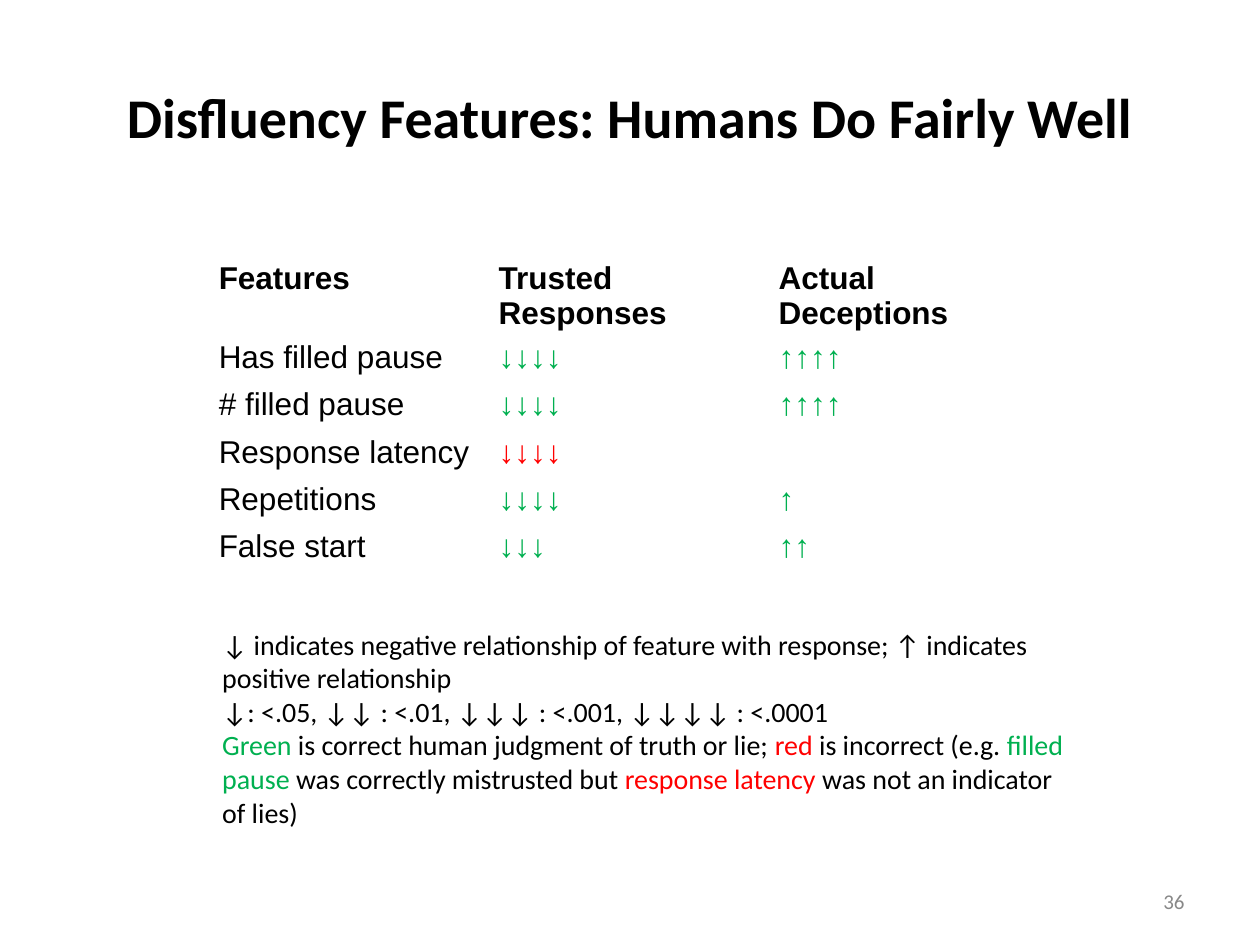
from pptx import Presentation
from pptx.dml.color import RGBColor
from pptx.enum.text import MSO_ANCHOR, PP_ALIGN
from pptx.util import Cm, Pt

BLACK = RGBColor(0x00, 0x00, 0x00)
GREEN = RGBColor(0x00, 0xB0, 0x50)
RED = RGBColor(0xFF, 0x00, 0x00)
GRAY = RGBColor(0x88, 0x88, 0x88)
MIDDLE = MSO_ANCHOR.MIDDLE
CENTER, RIGHT = PP_ALIGN.CENTER, PP_ALIGN.RIGHT

HEADS = ["Features", "Trusted Responses", "Actual Deceptions"]
ROWS = [
    ("Has filled pause", "↓↓↓↓", "↑↑↑↑"),
    ("# filled pause", "↓↓↓↓", "↑↑↑↑"),
    ("Response latency", "↓↓↓↓", ""),
    ("Repetitions", "↓↓↓↓", "↑"),
    ("False start", "↓↓↓", "↑↑"),
]
WRONG = "Response latency"
NOTES = [
    [("↓ indicates negative relationship of feature with response; "
      "↑ indicates positive relationship", BLACK)],
    [("↓: <.05, ↓↓ : <.01, ↓↓↓ : <.001, ↓↓↓↓ : <.0001", BLACK)],
    [("Green", GREEN), (" is correct human judgment of truth or lie; ", BLACK),
     ("red", RED), (" is incorrect (e.g. ", BLACK), ("filled pause ", GREEN),
     ("was correctly mistrusted but ", BLACK), ("response latency ", RED),
     ("was not an indicator of lies)", BLACK)],
]


def add_run(para, text, size, color, face="Calibri", bold=False):
    run = para.add_run()
    run.text = text
    font = run.font
    font.name, font.size, font.bold = face, Pt(size), bold
    font.color.rgb = color


def add_title(slide, box):
    title = slide.shapes.title
    title.left, title.top, title.width, title.height = box
    frame = title.text_frame
    frame.vertical_anchor = MIDDLE
    para = frame.paragraphs[0]
    para.alignment = CENTER
    add_run(para, "Disfluency Features: Humans Do Fairly Well", 32, BLACK, bold=True)


def add_grid(slide, box):
    rows = [HEADS] + ROWS
    table = slide.shapes.add_table(len(rows), len(HEADS), *box).table
    table.first_row = table.horz_banding = False
    for r, row in enumerate(rows):
        for c, text in enumerate(row):
            cell = table.cell(r, c)
            cell.fill.background()
            cell.margin_left = cell.margin_right = Cm(0.18)
            cell.margin_top = cell.margin_bottom = Cm(0.09)
            if not text:
                continue
            color = BLACK
            if r and c:
                color = RED if row[0] == WRONG else GREEN
            bold = r == 0 or (r, c) == (1, 1)
            add_run(cell.text_frame.paragraphs[0], text, 18, color, "Arial", bold)


def add_notes(slide, box):
    frame = slide.shapes.add_textbox(*box).text_frame
    frame.word_wrap = True
    for i, parts in enumerate(NOTES):
        para = frame.add_paragraph() if i else frame.paragraphs[0]
        for text, color in parts:
            add_run(para, text, 16, color)


def add_number(slide, box):
    frame = slide.shapes.add_textbox(*box).text_frame
    frame.word_wrap = True
    frame.vertical_anchor = MIDDLE
    para = frame.paragraphs[0]
    para.alignment = RIGHT
    add_run(para, "36", 12, GRAY)


def main():
    deck = Presentation()
    deck.slide_width, deck.slide_height = Cm(25.4), Cm(19.05)
    slide = deck.slides.add_slide(deck.slide_layouts[5])

    # Heading
    add_title(slide, (Cm(1.27), Cm(0.76), Cm(22.86), Cm(3.18)))
    # Feature table
    add_grid(slide, (Cm(4.23), Cm(5.16), Cm(16.93), Cm(5.72)))
    # Legend for arrows and colours
    add_notes(slide, (Cm(4.23), Cm(12.52), Cm(17.78), Cm(4.19)))
    # Slide number
    add_number(slide, (Cm(18.2), Cm(17.66), Cm(5.93), Cm(1.01)))

    deck.save("out.pptx")


if __name__ == "__main__":
    main()
